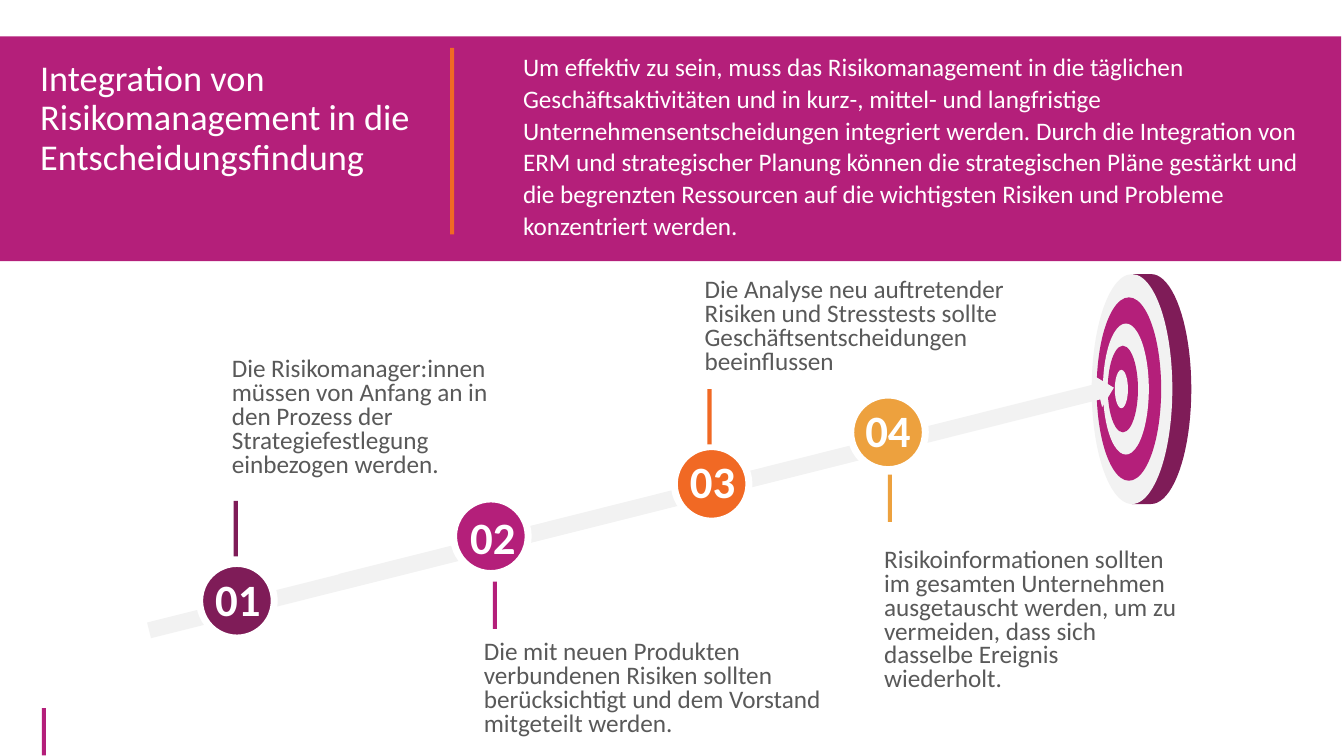
from math import cos, pi, sin

from pptx import Presentation
from pptx.dml.color import RGBColor
from pptx.enum.shapes import MSO_SHAPE as SHAPE
from pptx.enum.text import MSO_ANCHOR as ANCHOR, MSO_AUTO_SIZE as AUTO, PP_ALIGN as ALIGN
from pptx.util import Pt

WHITE, LIGHT, GREY = "FFFFFF", "F2F2F2", "595959"
MAGENTA, PLUM, ORANGE, AMBER = "B41F7A", "7F1C58", "F16924", "EDA13E"
BAR_W, CIRCLE, NUMBER_W, NUMBER_H = 2.9, 53.3, 47.5, 46.1


def rgb(value):
    return RGBColor.from_string(value)


class Board:
    font = "Calibri"

    def __init__(self, prs):
        self.s = prs.slides.add_slide(prs.slide_layouts[6])

    def paint(self, sp, fill, line=None, width=0):
        sp.shadow.inherit = False
        sp.fill.solid()
        sp.fill.fore_color.rgb = rgb(fill)
        if line:
            sp.line.color.rgb = rgb(line)
            sp.line.width = Pt(width)
        else:
            sp.line.fill.background()

    def shape(self, kind, x, y, w, h, fill, line=None, width=0, rotation=0):
        sp = self.s.shapes.add_shape(kind, Pt(x), Pt(y), Pt(w), Pt(h))
        sp.rotation = rotation
        self.paint(sp, fill, line, width)

    def outline(self, points, fill):
        points = [(Pt(x), Pt(y)) for x, y in points]
        fb = self.s.shapes.build_freeform(*points[0])
        fb.add_line_segments(points[1:], close=True)
        self.paint(fb.convert_to_shape(), fill)

    def text(self, box, text, size, color, spacing=None, inset=(7.2, 3.6),
             bold=False, wrap=True, grow=False, align=ALIGN.LEFT, anchor=ANCHOR.TOP):
        x, y, w, h = box
        tf = self.s.shapes.add_textbox(Pt(x), Pt(y), Pt(w), Pt(h)).text_frame
        tf.word_wrap = wrap
        tf.auto_size = AUTO.SHAPE_TO_FIT_TEXT if grow else AUTO.NONE
        tf.vertical_anchor = anchor
        tf.margin_left = tf.margin_right = Pt(inset[0])
        tf.margin_top = tf.margin_bottom = Pt(inset[1])
        p = tf.paragraphs[0]
        p.text = text
        p.alignment = align
        if spacing:
            p.line_spacing = spacing
        p.font.name = self.font
        p.font.size = Pt(size)
        p.font.bold = bold
        p.font.color.rgb = rgb(color)

    def bar(self, x, y, h, fill):
        self.shape(SHAPE.RECTANGLE, x, y, BAR_W, h, fill)

    def arrow(self, x, y):
        self.shape(SHAPE.RIGHT_ARROW, x, y, 569.5, 23, LIGHT, rotation=345.9)

    def target(self, middle, rings):
        right = [(822.2 + 28.8 * sin(a), middle - 82.1 * cos(a))
                 for a in (pi * i / 40 for i in range(41))]
        left = [(808.6 - 15.1 * sin(a), middle + 72.7 * cos(a))
                for a in (pi * i / 40 for i in range(41))]
        self.outline(right + [(808.6, middle + 82.1)] + left + [(808.6, middle - 82.1)], PLUM)
        for i, (center, w, h) in enumerate(rings):
            self.shape(SHAPE.OVAL, center - w / 2, middle - h / 2, w, h,
                       MAGENTA if i % 2 else LIGHT)

    def step(self, label, color, circle, number, bar, box, text):
        self.shape(SHAPE.OVAL, *circle, CIRCLE, CIRCLE, color, WHITE, 5)
        self.bar(*bar, color)
        self.text(box, text, 18, GREY, Pt(17.1), (2.9, 1.4), grow=True)
        self.text((*number, NUMBER_W, NUMBER_H), label, 32, WHITE, bold=True, wrap=False,
                  grow=True, align=ALIGN.CENTER, anchor=ANCHOR.MIDDLE)


RINGS = [(808.6, 57.6, 164.2), (806.4, 46.1, 131), (804.2, 32.8, 93.6),
         (802.1, 21.6, 61.9), (801, 9.4, 27.4)]

STEPS = [
    ("01", PLUM, (142.6, 402.5), (146.2, 404.6), (167, 357.8, 39.6),
     (162.7, 254.9, 190.1, 89.3),
     "Die Risikomanager:innen müssen von Anfang an in den Prozess der "
     "Strategiefestlegung einbezogen werden."),
    ("02", MAGENTA, (324, 356.4), (328.3, 360), (352.1, 415.4, 33.8),
     (342.7, 457.2, 254.9, 54.7),
     "Die mit neuen Produkten verbundenen Risiken sollten berücksichtigt "
     "und dem Vorstand mitgeteilt werden."),
    ("03", ORANGE, (481.7, 319), (485.3, 320.4), (505.4, 277.9, 39.6),
     (500.4, 198.7, 229.7, 72),
     "Die Analyse neu auftretender Risiken und Stresstests sollte "
     "Geschäftsentscheidungen beeinflussen"),
    ("04", AMBER, (607.7, 282.2), (610.6, 283.7), (634.3, 339.1, 33.8),
     (628.6, 391, 214.6, 106.6),
     "Risikoinformationen sollten im gesamten Unternehmen ausgetauscht werden, "
     "um zu vermeiden, dass sich dasselbe Ereignis wiederholt."),
]


def main():
    prs = Presentation()
    prs.slide_width, prs.slide_height = Pt(960), Pt(540)
    board = Board(prs)
    board.bar(29.9, 505.8, 33.8, MAGENTA)
    board.arrow(97.9, 369.4)
    board.shape(SHAPE.RECTANGLE, -2, 26, 960, 160.6, MAGENTA)
    board.text((366.5, 31.7, 572.4, 167),
               "Um effektiv zu sein, muss das Risikomanagement in die täglichen "
               "Geschäftsaktivitäten und in kurz-, mittel- und langfristige "
               "Unternehmensentscheidungen integriert werden. Durch die Integration von ERM "
               "und strategischer Planung können die strategischen Pläne gestärkt und die "
               "begrenzten Ressourcen auf die wichtigsten Risiken und Probleme konzentriert "
               "werden.", 18, WHITE, Pt(22.8))
    board.text((21.6, 39.6, 297.4, 111.6),
               "Integration von Risikomanagement in die Entscheidungsfindung",
               25.9, WHITE, 0.9)
    board.bar(321.5, 34.2, 133.2, ORANGE)
    board.target(277.9, RINGS)
    board.arrow(234.7, 334.8)
    for step in STEPS:
        board.step(*step)
    prs.save("out.pptx")


if __name__ == "__main__":
    main()
